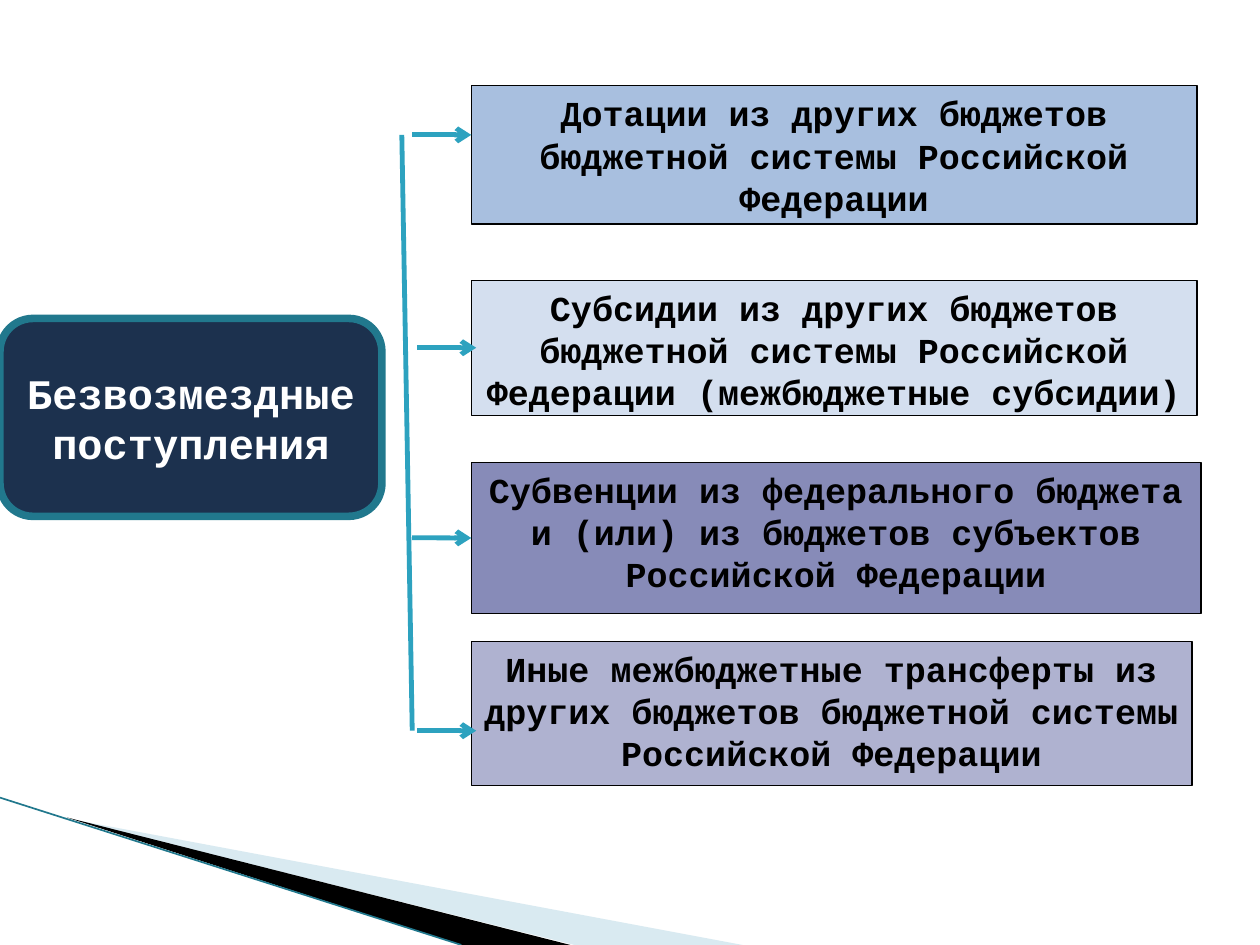
from lxml import etree
from pptx import Presentation
from pptx.dml.color import RGBColor
from pptx.enum.shapes import MSO_CONNECTOR, MSO_SHAPE
from pptx.enum.text import MSO_ANCHOR, PP_ALIGN
from pptx.oxml.ns import qn
from pptx.util import Cm, Pt

COLORS = {
    "grants": "A8BFDF", "subsidies": "D4DFEF", "subventions": "878BB8",
    "transfers": "AFB2D0", "root": "1C314E", "root_edge": "21788D",
    "arrow": "2DA2BF", "pale": "A0CBDC", "black": "000000", "white": "FFFFFF",
}
# colour, top, width, height, space after, arrow offset (x, y) from the left top corner, text
INCOME = [
    ("grants", 0, 14.63, 2.79, 10, (0, 0.99),
     "Дотации из других бюджетов бюджетной системы Российской Федерации"),
    ("subsidies", 3.93, 14.63, 2.72, 10, (0.1, 1.35),
     "Субсидии из других бюджетов бюджетной системы Российской Федерации "
     "(межбюджетные субсидии)"),
    ("subventions", 7.59, 14.71, 3.05, 0, (0, 1.52),
     "Субвенции из федерального бюджета и (или) из бюджетов субъектов "
     "Российской Федерации"),
    ("transfers", 11.2, 14.53, 2.9, 10, (0.1, 1.8),
     "Иные межбюджетные трансферты из других бюджетов бюджетной системы "
     "Российской Федерации"),
]
ARROW_LENGTH = 1.19


def rgb(name):
    return RGBColor.from_string(COLORS[name])


def add_line(s, start, end, color, width, arrow=False):
    line = s.shapes.add_connector(MSO_CONNECTOR.STRAIGHT, *map(Cm, start + end))
    line.line.color.rgb = rgb(color)
    line.line.width = Pt(width)
    if arrow:
        etree.SubElement(line.line._get_or_add_ln(), qn("a:tailEnd"), type="arrow")
    etree.SubElement(line._element.spPr, qn("a:effectLst"))
    return line


def add_box(s, kind, box, fill, edge, edge_width, text, size, color,
            anchor=MSO_ANCHOR.TOP, inset=0.25, after=0):
    sp = s.shapes.add_shape(kind, *map(Cm, box))
    sp.shadow.inherit = False
    sp.fill.solid()
    sp.fill.fore_color.rgb = rgb(fill)
    sp.line.color.rgb = rgb(edge)
    sp.line.width = Pt(edge_width)
    tf = sp.text_frame
    frame = {"word_wrap": True, "vertical_anchor": anchor,
             "margin_left": Cm(inset), "margin_right": Cm(inset)}
    for name, value in frame.items():
        setattr(tf, name, value)
    p = tf.paragraphs[0]
    for name, value in {"alignment": PP_ALIGN.CENTER, "space_after": Pt(after)}.items():
        setattr(p, name, value)
    r = p.add_run()
    r.text = text
    for name, value in {"name": "Courier New", "size": Pt(size), "bold": True}.items():
        setattr(r.font, name, value)
    r.font.color.rgb = rgb(color)
    return sp


def add_wedge(s, points, color, alpha=None):
    points = [(Cm(x), Cm(y)) for x, y in points]
    builder = s.shapes.build_freeform(*points[0])
    builder.add_line_segments(points[1:], close=True)
    sp = builder.convert_to_shape()
    sp.shadow.inherit = False
    sp.fill.solid()
    sp.fill.fore_color.rgb = rgb(color)
    sp.line.fill.background()
    if alpha:
        clr = sp._element.spPr.find(qn("a:solidFill"))[0]
        etree.SubElement(clr, qn("a:alpha"), val=str(alpha * 1000))


def add_corner(s, left, top):
    """Draw the sloping wedges in the bottom left corner."""
    def at(*points):
        return [(left + x, top + y) for x, y in points]

    add_wedge(s, at((1.4, 0.43), (14.97, 2.97), (11.58, 2.97)), "pale", 40)
    add_wedge(s, at((1.35, 0.4), (11.5, 2.97), (9.3, 2.97)), "black")
    add_line(s, *at((0, 0), (9.3, 2.97)), "root_edge", 0.95)


def add_root(s, box):
    add_box(s, MSO_SHAPE.ROUNDED_RECTANGLE, box, "root", "root_edge", 4.33,
            "Безвозмездные поступления", 24, "white", MSO_ANCHOR.MIDDLE, inset=0.03)


def add_income(s, left, top):
    """Draw the income boxes, the trunk and the arrow into each box."""
    boxes = [add_box(s, MSO_SHAPE.RECTANGLE, (left, top + y, w, h), color, "black",
                     0.75, text, 20, "black", after=after)
             for color, y, w, h, after, _, text in INCOME]
    ends = [(left + dx, top + y + dy) for _, y, _, _, _, (dx, dy), _ in INCOME]
    add_line(s, (left - 1.4, ends[0][1]), (left - ARROW_LENGTH, ends[-1][1]), "arrow", 2.75)
    for sp, (x, y) in zip(boxes, ends):
        arrow = add_line(s, (x - ARROW_LENGTH, y), (x, y), "arrow", 2.75, arrow=True)
        if sp is boxes[2]:
            arrow.end_connect(sp, 1)


def main():
    prs = Presentation()
    prs.slide_width, prs.slide_height = Cm(25.4), Cm(19.05)
    s = prs.slides.add_slide(prs.slide_layouts[6])
    add_corner(s, 0, 16.08)
    add_root(s, (0, 6.42, 7.7, 3.99))
    add_income(s, 9.5, 1.73)
    prs.save("out.pptx")


if __name__ == "__main__":
    main()
